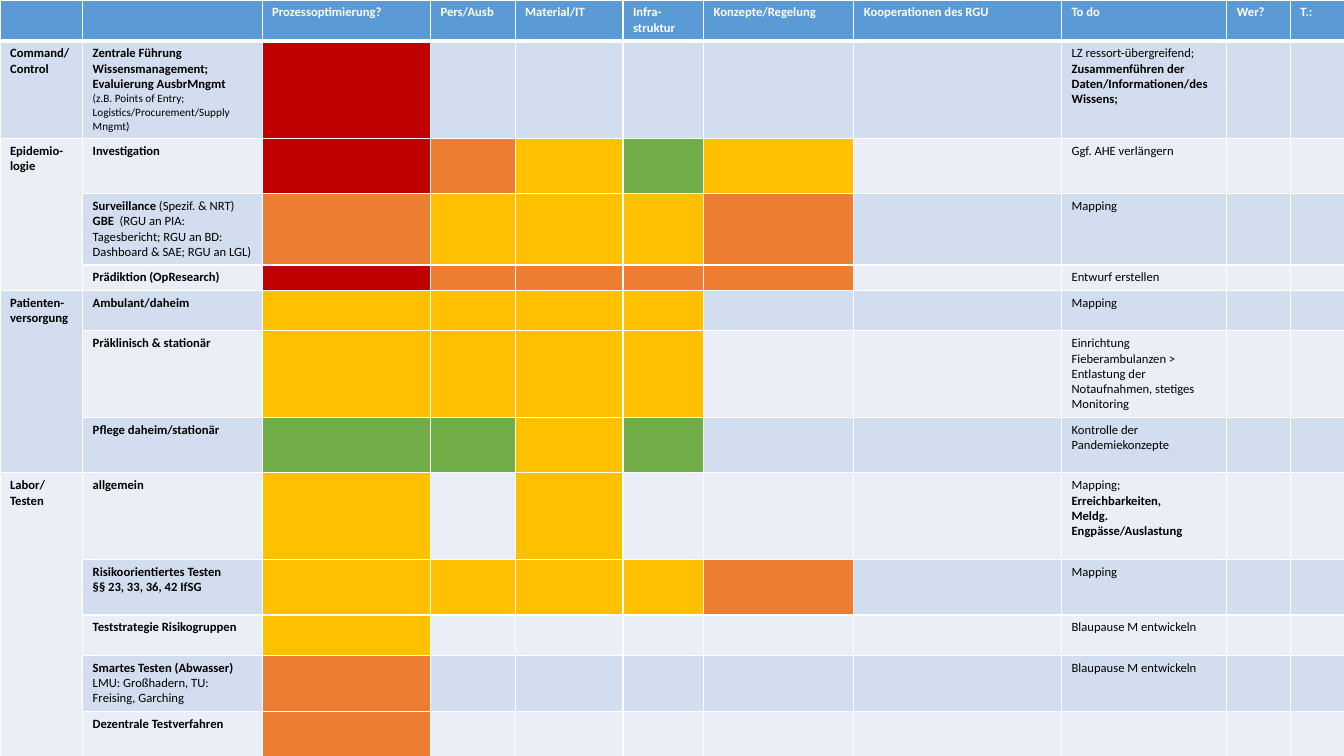
from lxml import etree
from pptx import Presentation
from pptx.dml.color import RGBColor
from pptx.oxml import ns
from pptx.util import Inches, Pt

HEADINGS = ["", "", "Prozessoptimierung?", "Pers/Ausb", "Material/IT", "Infra-struktur",
            "Konzepte/Regelung", "Kooperationen des RGU", "To do", "Wer?", "T.:"]
COLUMN_WIDTHS = [0.82, 1.78, 1.67, 0.84, 1.07, 0.8, 1.49, 2.06, 1.64, 0.63, 0.54]
HEADER_HEIGHT = 0.4
TODO_COLUMN = 8
FIRST_RATING_COLUMN = 2

# Area name and number of topics in it
AREAS = [("Command/\nControl", 1), ("Epidemio-logie", 3),
         ("Patienten-versorgung", 3), ("Labor/\nTesten", 5)]

# Row height, topic (regular text follows a bar), ratings, to do
TOPICS = [
    (0.86, "Zentrale Führung Wissensmanagement;\nEvaluierung AusbrMngmt\n"
           "|(z.B. Points of Entry; Logistics/Procurement/Supply Mngmt)", "R----",
     "LZ ressort-übergreifend;\nZusammenführen der Daten/Informationen/des Wissens;"),
    (0.55, "Investigation", "ROYGY", "Ggf. AHE verlängern"),
    (0.7, "Surveillance |(Spezif. & NRT)\n"
          "GBE  |(RGU an PIA: Tagesbericht; RGU an BD: Dashboard & SAE; RGU an LGL)",
     "OYYYO", "Mapping"),
    (0.25, "Prädiktion (OpResearch)", "ROOOO", "Entwurf erstellen"),
    (0.4, "Ambulant/daheim", "YYYY-", "Mapping"),
    (0.86, "Präklinisch & stationär", "YYYY-",
     "Einrichtung Fieberambulanzen > Entlastung der Notaufnahmen, stetiges Monitoring"),
    (0.55, "Pflege daheim/stationär", "GGYG-", "Kontrolle der Pandemiekonzepte"),
    (0.86, "allgemein", "Y-Y--",
     "Mapping;\nErreichbarkeiten,\nMeldg. Engpässe/Auslastung"),
    (0.55, "Risikoorientiertes Testen\n§§ 23, 33, 36, 42 IfSG", "YYYYO", "Mapping"),
    (0.4, "Teststrategie Risikogruppen", "Y----", "Blaupause M entwickeln"),
    (0.55, "Smartes Testen (Abwasser)\n|LMU: Großhadern, TU: Freising, Garching",
     "O----", "Blaupause M entwickeln"),
    (0.55, "Dezentrale Testverfahren", "O----", ""),
]
RATING_COLORS = {"R": "C00000", "O": "ED7D31", "Y": "FFC000", "G": "70AD47"}
HEADER_COLOR = "5B9BD5"
BAND_COLORS = ["D2DEEF", "EAEFF7"]
FONT = "Calibri"
TEXT_SIZE, NOTE_SIZE = 9, 8


def color(value):
    return RGBColor.from_string(value)


def set_borders(cell, top=1, bottom=1):
    """Draw white cell borders; widths are in points."""
    properties = cell._tc.get_or_add_tcPr()
    for side, width in (("L", 1), ("R", 1), ("T", top), ("B", bottom)):
        line = etree.SubElement(properties, ns.qn(f"a:ln{side}"), w=str(Pt(width)))
        fill = etree.SubElement(line, ns.qn("a:solidFill"))
        etree.SubElement(fill, ns.qn("a:srgbClr"), val="FFFFFF")


def set_fill(cell, value):
    cell.fill.solid()
    cell.fill.fore_color.rgb = color(value)


def write(cell, content, font_color="000000", note_size=TEXT_SIZE):
    """Write lines in bold up to a bar and in regular weight after it."""
    text_frame = cell.text_frame
    for index, line in enumerate(content.split("\n")):
        paragraph = text_frame.add_paragraph() if index else text_frame.paragraphs[0]
        bold_part, _, regular_part = line.partition("|")
        for part, bold, size in ((bold_part, True, TEXT_SIZE),
                                 (regular_part, False, note_size)):
            if part:
                run = paragraph.add_run()
                run.text = part
                run.font.name = FONT
                run.font.size = Pt(size)
                run.font.bold = bold
                run.font.color.rgb = color(font_color)
        # An empty cell takes its line height from this size
        paragraph._p.get_or_add_endParaRPr().set("sz", str(TEXT_SIZE * 100))


presentation = Presentation()
presentation.slide_width = Inches(13.33)
presentation.slide_height = Inches(7.5)
slide = presentation.slides.add_slide(presentation.slide_layouts[6])

heights = [HEADER_HEIGHT] + [topic[0] for topic in TOPICS]
table = slide.shapes.add_table(len(heights), len(COLUMN_WIDTHS), 0, 0,
                               Inches(13.33), Inches(sum(heights))).table
for column, width in zip(table.columns, COLUMN_WIDTHS):
    column.width = Inches(width)
for row, height in zip(table.rows, heights):
    row.height = Inches(height)

for column, heading in enumerate(HEADINGS):
    cell = table.cell(0, column)
    set_borders(cell, bottom=3)
    set_fill(cell, HEADER_COLOR)
    write(cell, heading, "FFFFFF")

areas_by_row = {}
next_row = 1
for area, count in AREAS:
    areas_by_row[next_row] = area
    if count > 1:
        table.cell(next_row, 0).merge(table.cell(next_row + count - 1, 0))
    next_row += count

for row, (_, topic, ratings, todo) in enumerate(TOPICS, start=1):
    contents = {0: areas_by_row.get(row, ""), 1: topic, TODO_COLUMN: "|" + todo}
    fills = {column: RATING_COLORS[rating]
             for column, rating in enumerate(ratings, start=FIRST_RATING_COLUMN)
             if rating in RATING_COLORS}
    band = BAND_COLORS[(row - 1) % 2]
    for column in range(len(COLUMN_WIDTHS)):
        cell = table.cell(row, column)
        set_borders(cell, top=3 if row == 1 else 1)
        set_fill(cell, fills.get(column, band))
        write(cell, contents.get(column, ""),
              note_size=NOTE_SIZE if row == 1 and column == 1 else TEXT_SIZE)

presentation.save("out.pptx")
